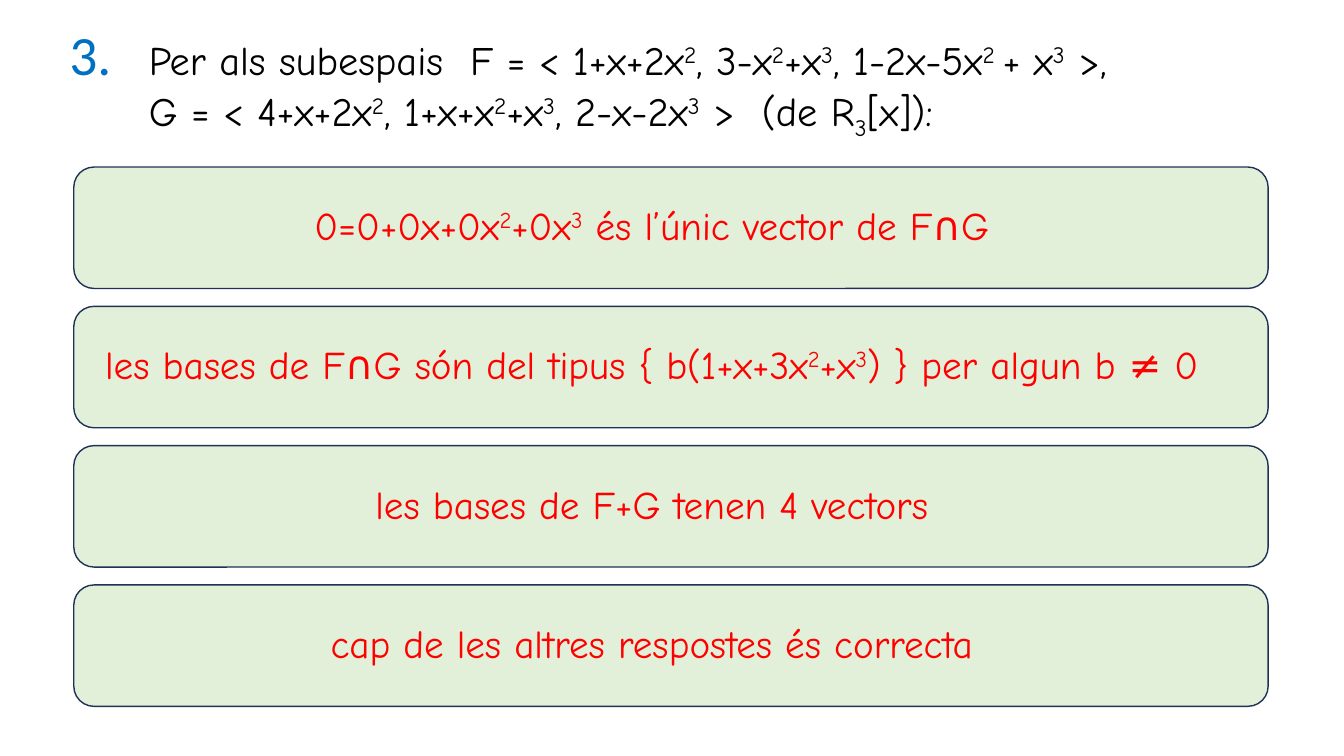
from dataclasses import dataclass

import pptx
import pptx.dml.color
import pptx.enum.shapes
import pptx.enum.text
import pptx.util

Cm = pptx.util.Cm
Pt = pptx.util.Pt
RGBColor = pptx.dml.color.RGBColor


@dataclass(frozen=True)
class Theme:
    text_font: str = "Comic Neue"
    number_font: str = "Calibri"
    number_color: str = "0070C0"
    question_color: str = "000000"
    answer_color: str = "FF0000"
    box_fill: str = "E2F0D9"
    box_line: str = "1E3256"
    number_size: float = 39.6
    question_size: float = 28.8
    answer_size: float = 28


theme = Theme()
BASELINES = {"^": "30000", "_": "-25000"}


def add_run(paragraph, text, font_name, size, color):
    run = paragraph.add_run()
    run.text = text
    run.font.name = font_name
    run.font.size = Pt(size)
    run.font.color.rgb = RGBColor.from_string(color)
    return run


def add_formula(paragraph, formula, size, color):
    """Add runs split at "|"; a piece led by ^ is raised, one led by _ lowered."""
    for piece in formula.split("|"):
        baseline = BASELINES.get(piece[0])
        text = piece[1:] if baseline else piece
        run = add_run(paragraph, text, theme.text_font, size, color)
        if baseline:
            run.font._element.set("baseline", baseline)


presentation = pptx.Presentation()
presentation.slide_width = Cm(33.87)
presentation.slide_height = Cm(19.05)
slide = presentation.slides.add_slide(presentation.slide_layouts[6])

# Question, with a hanging indent after its number
question_lines = [
    "Per als subespais  F = < 1+x+2x|^2|, 3-x|^2|+x|^3|, 1-2x-5x|^2 |+ x|^3| >,",
    "G = < 4+x+2x|^2|, 1+x+x|^2|+x|^3|, 2-x-2x|^3| >  (de R|_3|[x]):",
]
question_box = slide.shapes.add_textbox(Cm(1.5), Cm(0.23), Cm(31.47), Cm(3.68))
question_frame = question_box.text_frame
question_frame.word_wrap = True
question_frame.vertical_anchor = pptx.enum.text.MSO_ANCHOR.MIDDLE
paragraph = question_frame.paragraphs[0]
paragraph.line_spacing = 0.9
hanging_indent = Cm(2)
paragraph_properties = paragraph._p.get_or_add_pPr()
paragraph_properties.set("marL", str(hanging_indent))
paragraph_properties.set("indent", str(-hanging_indent))

add_run(paragraph, "3.\t", theme.number_font, theme.number_size, theme.number_color)
add_formula(paragraph, question_lines[0], theme.question_size, theme.question_color)
paragraph.add_line_break()
add_formula(paragraph, question_lines[1], theme.question_size, theme.question_color)

# Answer boxes, stacked at an equal pitch
answers = [
    "0=0+0x+0x|^2|+0x|^3| és l’únic vector de F∩G",
    "les bases de F∩G són del tipus { b(1+x+3x|^2|+x|^3|) } per algun b ≠ 0",
    "les bases de F+G tenen 4 vectors",
    "cap de les altres respostes és correcta",
]
first_top, pitch = 4.21, 3.51
for index, answer in enumerate(answers):
    answer_box = slide.shapes.add_shape(
        pptx.enum.shapes.MSO_SHAPE.ROUNDED_RECTANGLE,
        Cm(1.86), Cm(first_top + index * pitch), Cm(30.1), Cm(3.06),
    )
    answer_box.shadow.inherit = False
    answer_box.fill.solid()
    answer_box.fill.fore_color.rgb = RGBColor.from_string(theme.box_fill)
    answer_box.line.color.rgb = RGBColor.from_string(theme.box_line)
    answer_box.line.width = Pt(1)

    answer_frame = answer_box.text_frame
    answer_frame.word_wrap = True
    answer_frame.vertical_anchor = pptx.enum.text.MSO_ANCHOR.MIDDLE
    answer_frame.margin_right = Cm(1.22)
    paragraph = answer_frame.paragraphs[0]
    paragraph.alignment = pptx.enum.text.PP_ALIGN.CENTER
    paragraph.line_spacing = 0.9
    paragraph.space_before = Pt(10)
    add_formula(paragraph, answer, theme.answer_size, theme.answer_color)

presentation.save("out.pptx")
